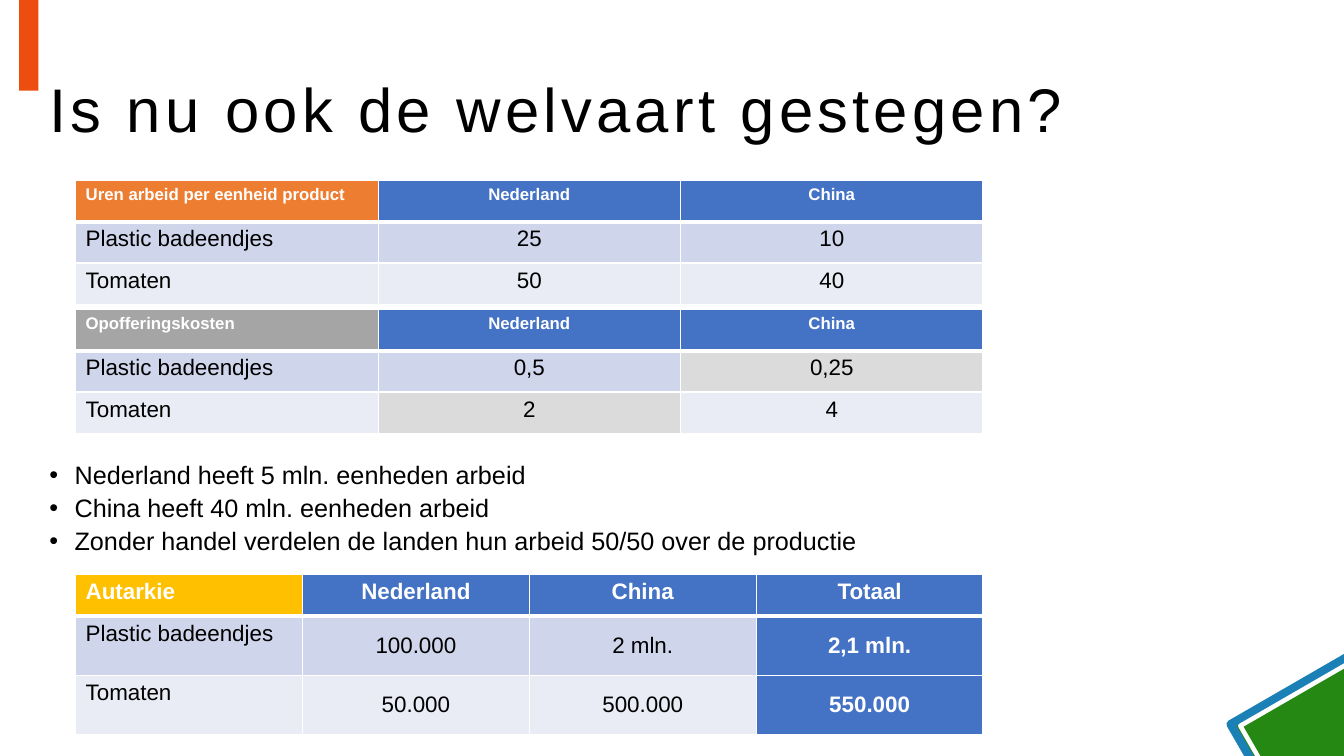
"""Build a slide comparing labour hours, opportunity costs and autarky output."""
from dataclasses import dataclass

from lxml import etree
from pptx import Presentation
from pptx.dml.color import RGBColor
from pptx.enum.shapes import MSO_SHAPE
from pptx.enum.text import MSO_ANCHOR, MSO_AUTO_SIZE, PP_ALIGN
from pptx.oxml.ns import qn
from pptx.util import Emu, Pt

RECTANGLE = MSO_SHAPE.RECTANGLE
TOP, MIDDLE = MSO_ANCHOR.TOP, MSO_ANCHOR.MIDDLE
LEFT, CENTER = PP_ALIGN.LEFT, PP_ALIGN.CENTER
NO_AUTOFIT = MSO_AUTO_SIZE.NONE

PX = 9144
FONT = "Arial"
BLACK = RGBColor(0x00, 0x00, 0x00)
WHITE = RGBColor(0xFF, 0xFF, 0xFF)
GREEN = RGBColor(0x25, 0x88, 0x12)
TEAL = RGBColor(0x1A, 0x80, 0xB6)
RED_ORANGE = RGBColor(0xED, 0x4D, 0x0F)
ORANGE = RGBColor(0xED, 0x7D, 0x31)
GRAY = RGBColor(0xA5, 0xA5, 0xA5)
GOLD = RGBColor(0xFF, 0xC0, 0x00)
BLUE = RGBColor(0x44, 0x72, 0xC4)
LIGHT_GRAY = RGBColor(0xDB, 0xDB, 0xDB)
BANDS = (RGBColor(0xCF, 0xD5, 0xEA), RGBColor(0xE9, 0xEB, 0xF5))


@dataclass(frozen=True)
class Decoration:
    left: int
    top: int
    width: int
    height: int
    fill: RGBColor | None = None
    line: RGBColor | None = None
    line_points: float = 0
    rotation: int = 0


@dataclass(frozen=True)
class Grid:
    top: int
    row_heights: tuple[int, ...]
    rows: tuple[tuple[str, ...], ...]
    corner_fill: RGBColor
    header_size: int = 12
    value_anchor: MSO_ANCHOR = TOP
    highlights: tuple[tuple[int, int], ...] = ()
    total_column: int | None = None


TABLE_LEFT, TABLE_WIDTH = 75, 900
TITLE = "Is nu ook de welvaart gestegen?"
BULLETS = (
    "Nederland heeft 5 mln. eenheden arbeid",
    "China heeft 40 mln. eenheden arbeid",
    "Zonder handel verdelen de landen hun arbeid 50/50 over de productie",
)
DECORATIONS = (
    Decoration(1248, 671, 150, 150, GREEN, TEAL, 6, 60),
    Decoration(1255, 677, 136, 136, None, WHITE, 3.25, 60),
    Decoration(19, 0, 19, 90, RED_ORANGE),
)
GRIDS = (
    Grid(179, (41, 41, 41), (
        ("Uren arbeid per eenheid product", "Nederland", "China"),
        ("Plastic badeendjes", "25", "10"),
        ("Tomaten", "50", "40"),
    ), ORANGE),
    Grid(307, (41, 41, 41), (
        ("Opofferingskosten", "Nederland", "China"),
        ("Plastic badeendjes", "0,5", "0,25"),
        ("Tomaten", "2", "4"),
    ), GRAY, highlights=((1, 2), (2, 1))),
    Grid(570, (41, 59, 59), (
        ("Autarkie", "Nederland", "China", "Totaal"),
        ("Plastic badeendjes", "100.000", "2 mln.", "2,1 mln."),
        ("Tomaten", "50.000", "500.000", "550.000"),
    ), GOLD, header_size=16, value_anchor=MIDDLE, total_column=3),
)


def px(length: int) -> Emu:
    return Emu(length * PX)


def place(shape, left: int, top: int, width: int, height: int) -> None:
    shape.left, shape.top = px(left), px(top)
    shape.width, shape.height = px(width), px(height)


def format_para(para, size: int, color: RGBColor, bold: bool = False) -> None:
    for span in para.runs:
        span.font.name = FONT
        span.font.size = Pt(size)
        span.font.bold = bold
        span.font.color.rgb = color


def draw_decoration(page, item: Decoration) -> None:
    box = page.shapes.add_shape(
        RECTANGLE, px(item.left), px(item.top), px(item.width), px(item.height))
    box.shadow.inherit = False
    box.rotation = item.rotation
    if item.fill is None:
        box.fill.background()
    else:
        box.fill.solid()
        box.fill.fore_color.rgb = item.fill
    if item.line is None:
        box.line.fill.background()
    else:
        box.line.color.rgb = item.line
        box.line.width = Pt(item.line_points)


def set_borders(cell, bottom_points: int) -> None:
    properties = cell._tc.get_or_add_tcPr()
    for index, side in enumerate(("lnL", "lnR", "lnT", "lnB")):
        points = bottom_points if side == "lnB" else 1
        line = etree.Element(qn(f"a:{side}"), w=str(Pt(points)))
        fill = etree.SubElement(line, qn("a:solidFill"))
        etree.SubElement(fill, qn("a:srgbClr"), val=str(WHITE))
        properties.insert(index, line)


def cell_fill(grid: Grid, row: int, column: int) -> RGBColor:
    if (row, column) == (0, 0):
        return grid.corner_fill
    if row == 0 or column == grid.total_column:
        return BLUE
    return LIGHT_GRAY if (row, column) in grid.highlights else BANDS[row - 1]


def draw_grid(page, grid: Grid) -> None:
    column_count = len(grid.rows[0])
    table = page.shapes.add_table(
        len(grid.rows), column_count, px(TABLE_LEFT), px(grid.top),
        px(TABLE_WIDTH), px(sum(grid.row_heights))).table
    for column in table.columns:
        column.width = px(TABLE_WIDTH // column_count)
    for row, texts in enumerate(grid.rows):
        table.rows[row].height = px(grid.row_heights[row])
        for column, text in enumerate(texts):
            cell = table.cell(row, column)
            cell.text_frame.text = text
            cell.fill.solid()
            cell.fill.fore_color.rgb = cell_fill(grid, row, column)
            cell.vertical_anchor = grid.value_anchor if row and column else TOP
            para = cell.text_frame.paragraphs[0]
            para.alignment = CENTER if column else LEFT
            strong = row == 0 or column == grid.total_column
            format_para(para, 16 if row else grid.header_size,
                        WHITE if strong else BLACK, strong)
            set_borders(cell, 1 if row else 3)


def fill_title(title) -> None:
    place(title, 39, 39, 1261, 145)
    title.text_frame.text = TITLE
    title.text_frame.auto_size = NO_AUTOFIT
    title.text_frame.vertical_anchor = MIDDLE
    para = title.text_frame.paragraphs[0]
    para.alignment = LEFT
    para.line_spacing = 0.9
    format_para(para, 44, BLACK)
    para.runs[0].font._element.set("spc", "300")


def fill_body(body) -> None:
    place(body, 39, 454, 1261, 110)
    body.text_frame.text = "\n".join(BULLETS)
    body.text_frame.auto_size = NO_AUTOFIT
    for para in body.text_frame.paragraphs:
        para.line_spacing = 0.9
        para.space_before = para.space_after = Pt(2)
        format_para(para, 18, BLACK)
        properties = para._p.get_or_add_pPr()
        properties.set("marL", str(px(25)))
        properties.set("indent", str(px(-25)))
        etree.SubElement(properties, qn("a:buFont"), typeface=FONT)
        etree.SubElement(properties, qn("a:buChar"), char="•")


def main() -> None:
    deck = Presentation()
    deck.slide_width, deck.slide_height = px(1333), px(750)
    page = deck.slides.add_slide(deck.slide_layouts[1])
    for item in DECORATIONS:
        draw_decoration(page, item)
    fill_title(page.shapes.title)
    for grid in GRIDS:
        draw_grid(page, grid)
    fill_body(page.placeholders[1])
    deck.save("out.pptx")


if __name__ == "__main__":
    main()
